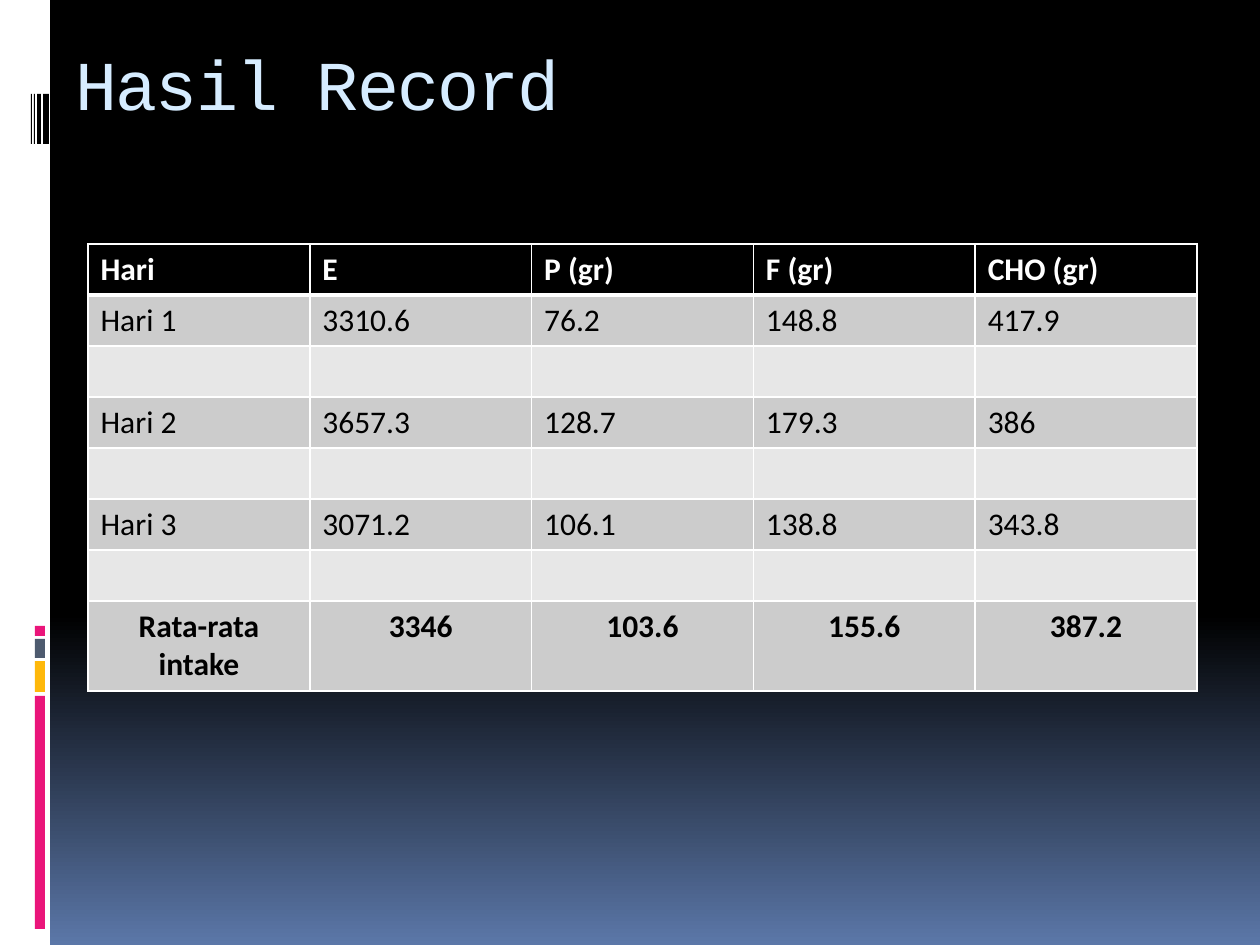
import copy

import pptx
import pptx.dml.color
import pptx.enum.shapes
import pptx.enum.text
import pptx.oxml
import pptx.oxml.ns
import pptx.util

EMU_PER_PX = 914400 / 126
WHITE, BLACK, PINK = "FFFFFF", "000000", "EA157A"

ROWS = [
    ["Hari", "E", "P (gr)", "F (gr)", "CHO (gr)"],
    ["Hari 1", "3310.6", "76.2", "148.8", "417.9"],
    [""] * 5,
    ["Hari 2", "3657.3", "128.7", "179.3", "386"],
    [""] * 5,
    ["Hari 3", "3071.2", "106.1", "138.8", "343.8"],
    [""] * 5,
    ["Rata-rata intake", "3346", "103.6", "155.6", "387.2"],
]


def px(length):
    return pptx.util.Emu(round(length * EMU_PER_PX))


def color(value):
    return pptx.dml.color.RGBColor.from_string(value)


def add_span(para, text, font, size, fill, bold=False):
    span = para.add_run()
    span.text = text
    span.font.name = font
    span.font.size = pptx.util.Pt(size)
    span.font.bold = bold
    span.font.color.rgb = color(fill)
    return span


def add_bar(page, left, top, width, height, fill):
    bar = page.shapes.add_shape(
        pptx.enum.shapes.MSO_SHAPE.RECTANGLE, px(left), px(top), px(width), px(height))
    bar.shadow.inherit = False
    bar.fill.solid()
    bar.fill.fore_color.rgb = color(fill)
    bar.line.fill.background()


def paint_background(page):
    """Black down to 65 %, then fading to blue at the bottom."""
    fill = page.background.fill
    fill.gradient()
    fill.gradient_angle = 270
    first, last = fill.gradient_stops
    first.color.rgb, first.position = color(BLACK), 0
    last.color.rgb, last.position = color("5B77A8"), 1
    stops = next(page.element.iter(pptx.oxml.ns.qn("a:gsLst")))
    middle = copy.deepcopy(stops[0])
    middle.set("pos", "65000")
    stops.insert(1, middle)


def add_side_strip(page, left, top, width, height):
    add_bar(page, left, top, width, height, WHITE)
    for offset, length, fill in [
            (696, 233, PINK), (661, 31, "FEB80A"), (639, 19, "4E5B6F"), (626, 10, PINK)]:
        add_bar(page, left + 35, top + offset, 10, length, fill)
    for offset, thickness in [(43, 6), (37, 4), (34, 1), (31, 1)]:
        add_bar(page, left + offset, top + 94, thickness, 50, BLACK)


def add_title(page, left, top, width, height):
    box = page.shapes.add_textbox(px(left), px(top), px(width), px(height))
    frame = box.text_frame
    frame.word_wrap = True
    frame.margin_top = px(20)
    span = add_span(frame.paragraphs[0], "Hasil Record", "Courier New", 40, "D6ECFF")
    span.font._element.set("spc", "-100")


def set_borders(cell, widths):
    """Draw white borders; widths maps a side (L, R, T, B) to points."""
    properties = cell._tc.get_or_add_tcPr()
    for side, points in widths.items():
        properties.append(pptx.oxml.parse_xml(
            f'<a:ln{side} {pptx.oxml.ns.nsdecls("a")} w="{pptx.util.Pt(points)}">'
            f'<a:solidFill><a:srgbClr val="{WHITE}"/></a:solidFill></a:ln{side}>'))


def add_intake_table(page, left, top, width, row_height, last_height):
    last = len(ROWS) - 1
    table = page.shapes.add_table(
        len(ROWS), len(ROWS[0]), px(left), px(top), px(width),
        px(last * row_height + last_height)).table
    for r, texts in enumerate(ROWS):
        table.rows[r].height = px(last_height if r == last else row_height)
        row_fill = BLACK if r == 0 else "CCCCCC" if r % 2 else "E7E7E7"
        for c, text in enumerate(texts):
            cell = table.cell(r, c)
            set_borders(cell, {"L": 1, "R": 1, "T": 3 if r == 1 else 1, "B": 3 if r == 0 else 1})
            cell.fill.solid()
            cell.fill.fore_color.rgb = color(row_fill)
            para = cell.text_frame.paragraphs[0]
            para.font.size = pptx.util.Pt(18)
            if r == last:
                para.alignment = pptx.enum.text.PP_ALIGN.CENTER
            if text:
                add_span(para, text, "Calibri", 18, BLACK if r else WHITE, r in (0, last))


def main():
    deck = pptx.Presentation()
    deck.slide_width, deck.slide_height = px(1260), px(945)
    page = deck.slides.add_slide(deck.slide_layouts[6])
    paint_background(page)
    add_side_strip(page, 0, 0, 50, 945)
    add_title(page, 63, 21, 1134, 173)
    add_intake_table(page, 88, 244, 1109, 51, 90)
    deck.save("out.pptx")


if __name__ == "__main__":
    main()
